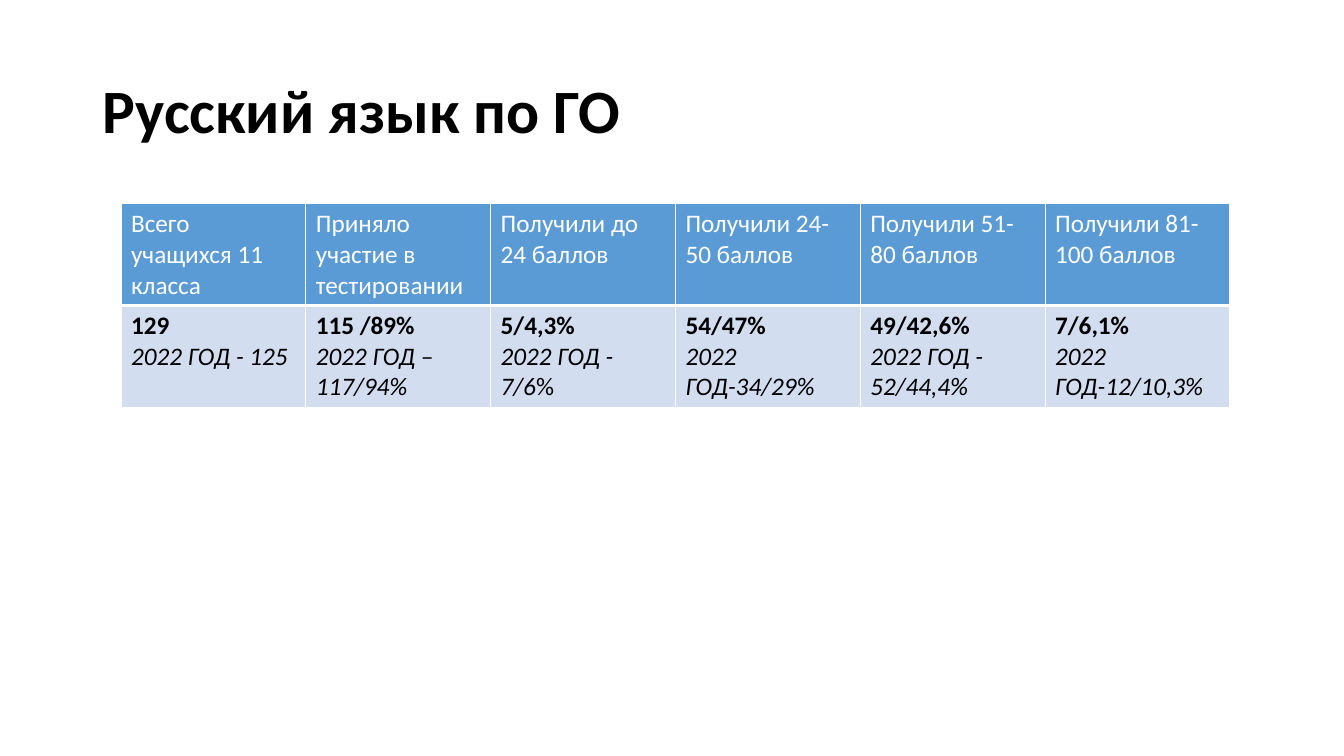
from lxml.etree import SubElement
from pptx import Presentation
from pptx.dml.color import RGBColor
from pptx.enum.text import MSO_ANCHOR
from pptx.oxml.ns import qn
from pptx.util import Inches, Pt

# Content: each column has a heading, this year's result and last year's runs (text, italic)
TITLE = "Русский язык по ГО"
COLUMNS = [
    ("Всего учащихся 11 класса", "129", [("2022 ГОД - 125", True)]),
    ("Приняло участие в тестировании", "115 /89%", [("2022 ГОД – 117/94%", True)]),
    ("Получили до 24 баллов", "5/4,3%", [("2022 ГОД - 7/6", True), ("%", False)]),
    ("Получили 24-50 баллов", "54/47%", [("2022 ГОД-34/29%", True)]),
    ("Получили 51-80 баллов", "49/42,6%", [("2022 ГОД - 52/44,4%", True)]),
    ("Получили 81-100 баллов", "7/6,1%", [("2022 ГОД-12/10,3%", True)]),
]

# Style
FONT = "Calibri"
BLACK = RGBColor(0x00, 0x00, 0x00)
WHITE = RGBColor(0xFF, 0xFF, 0xFF)
HEADER_BLUE = RGBColor(0x5B, 0x9B, 0xD5)
RESULT_BLUE = RGBColor(0xD2, 0xDE, 0xEF)
THIN, THICK = Pt(1), Pt(3)


def add_run(paragraph, text, size, color, bold=False, italic=False):
    run = paragraph.add_run()
    run.text = text
    font = run.font
    font.name, font.size = FONT, Pt(size)
    font.bold, font.italic = bold, italic
    font.color.rgb = color


def style_cell(cell, fill, top=THIN, bottom=THIN):
    borders = {"a:lnL": THIN, "a:lnR": THIN, "a:lnT": top, "a:lnB": bottom}
    properties = cell._tc.get_or_add_tcPr()
    for tag, width in borders.items():
        line = SubElement(properties, qn(tag), w=str(width))
        solid = SubElement(line, qn("a:solidFill"))
        SubElement(solid, qn("a:srgbClr"), val=str(WHITE))
    cell.fill.solid()
    cell.fill.fore_color.rgb = fill


prs = Presentation()
prs.slide_width, prs.slide_height = Inches(13.33), Inches(7.5)
slide = prs.slides.add_slide(prs.slide_layouts[6])

# Title
title = slide.shapes.add_textbox(Inches(0.92), Inches(0.4), Inches(11.5), Inches(1.45))
title.text_frame.word_wrap = True
title.text_frame.vertical_anchor = MSO_ANCHOR.MIDDLE
heading = title.text_frame.paragraphs[0]
heading.line_spacing = 0.9
add_run(heading, TITLE, 44, BLACK, bold=True)

# Results table
results = slide.shapes.add_table(
    2, len(COLUMNS), Inches(1.2), Inches(2.02), Inches(11), Inches(2.02)
).table
for index, (label, current, previous) in enumerate(COLUMNS):
    header, result = results.cell(0, index), results.cell(1, index)
    style_cell(header, HEADER_BLUE, bottom=THICK)
    style_cell(result, RESULT_BLUE, top=THICK)
    add_run(header.text_frame.paragraphs[0], label, 18, WHITE)
    add_run(result.text_frame.paragraphs[0], current, 18, BLACK, bold=True)
    last_year = result.text_frame.add_paragraph()
    for text, italic in previous:
        add_run(last_year, text, 18, BLACK, italic=italic)

prs.save("out.pptx")
